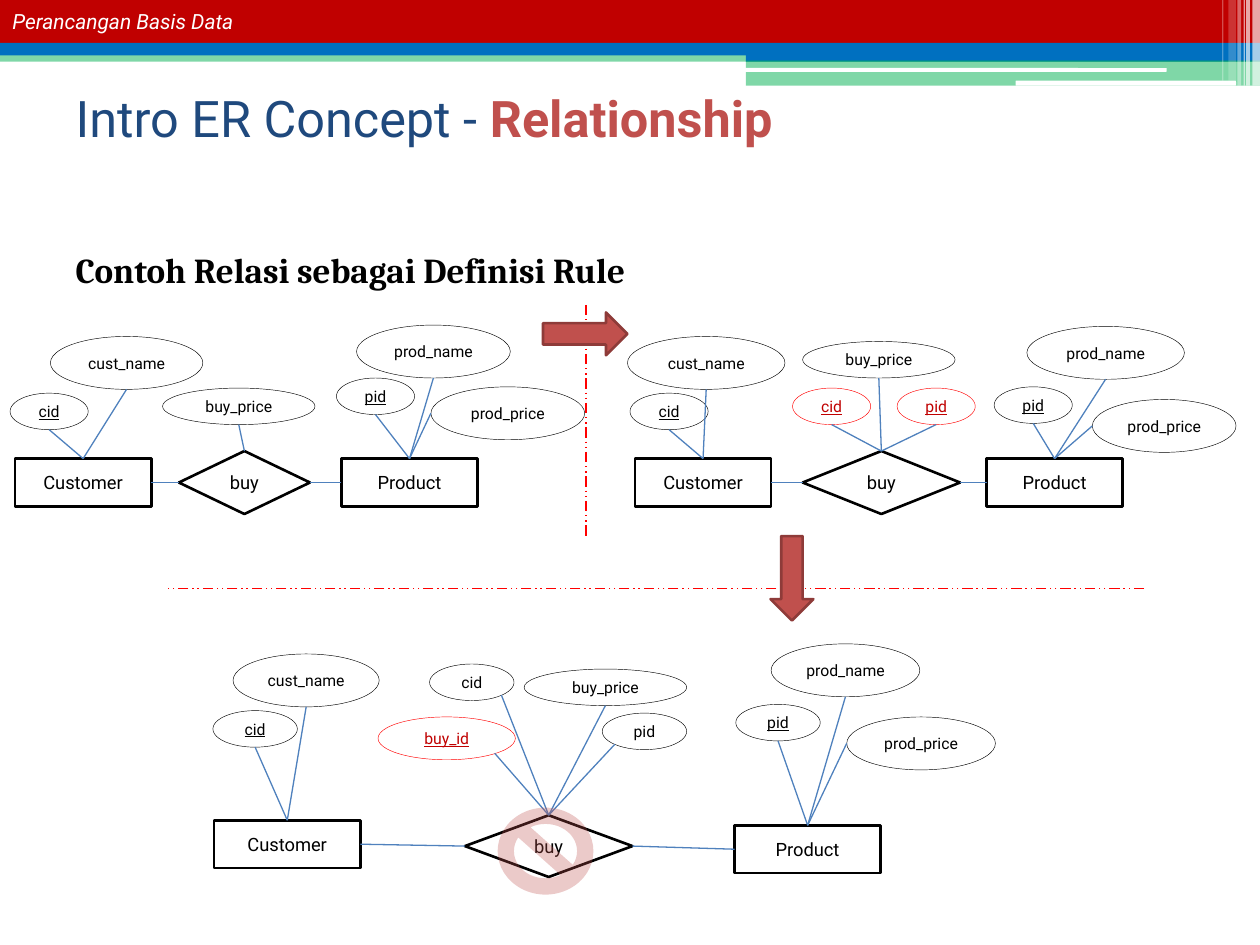
from dataclasses import dataclass
from typing import NamedTuple
from lxml.etree import SubElement
from pptx import Presentation
from pptx.dml.color import RGBColor
from pptx.enum.dml import MSO_LINE
from pptx.enum.shapes import MSO_CONNECTOR, MSO_SHAPE
from pptx.enum.text import MSO_ANCHOR, PP_ALIGN
from pptx.oxml.ns import qn
from pptx.util import Emu, Pt

PX = 9144
BLACK = RGBColor(0x00, 0x00, 0x00)
WHITE = RGBColor(0xFF, 0xFF, 0xFF)
RED = RGBColor(0xFF, 0x00, 0x00)
CRIMSON = RGBColor(0xC0, 0x00, 0x00)
BLUE = RGBColor(0x00, 0x70, 0xC0)
GREEN = RGBColor(0x00, 0xB0, 0x50)
NAVY = RGBColor(0x1F, 0x49, 0x7D)
BRICK = RGBColor(0xC0, 0x50, 0x4D)
RUST = RGBColor(0x8E, 0x3B, 0x39)
STEEL = RGBColor(0x4F, 0x81, 0xBD)
SANS = "Roboto"
RECT, ROUND = MSO_SHAPE.RECTANGLE, MSO_SHAPE.ROUNDED_RECTANGLE
PLAIN, RHOMB = MSO_SHAPE.FLOWCHART_PROCESS, MSO_SHAPE.FLOWCHART_DECISION
TOP, LEFT, RIGHT, BOTTOM = (0.5, 0), (0, 0.5), (1, 0.5), (0.5, 1)
LOW_LEFT, LOW_RIGHT = (0.15, 0.85), (0.85, 0.85)


class Box(NamedTuple):
    left: int
    top: int
    width: int
    height: int

    def spot(self, across: float, down: float) -> tuple[float, float]:
        return self.left + across * self.width, self.top + down * self.height


@dataclass
class Band:
    box: Box
    color: RGBColor
    alpha: int = 100
    kind: MSO_SHAPE = RECT


@dataclass
class Field:
    name: str
    box: Box
    key: bool = False
    red: bool = False
    foot: tuple = BOTTOM


@dataclass
class Node:
    name: str
    kind: MSO_SHAPE
    box: Box
    fields: list[Field]


BANDS = [
    Band(Box(0, 40, 1000, 9), GREEN, 50),
    Band(Box(0, 0, 1000, 34), CRIMSON),
    Band(Box(0, 34, 1000, 10), BLUE),
    Band(Box(592, 39, 408, 10), BLUE),
    Band(Box(592, 48, 408, 20), GREEN, 50),
    Band(Box(591, 54, 335, 3), WHITE, kind=ROUND),
    Band(Box(806, 64, 175, 4), WHITE, kind=ROUND),
    Band(Box(994, 0, 6, 68), WHITE, 65),
    Band(Box(989, 0, 3, 68), WHITE, 65),
    Band(Box(987, 0, 1, 68), WHITE, 60),
    Band(Box(982, 0, 3, 68), WHITE, 40),
    Band(Box(975, 0, 6, 64), WHITE, 20),
    Band(Box(970, 0, 1, 64), WHITE, 30),
]
CHARTS = [[
    Node("Customer", PLAIN, Box(12, 364, 108, 38), [
        Field("cid", Box(8, 312, 62, 29), True),
        Field("cust_name", Box(40, 267, 121, 42))]),
    Node("buy", RHOMB, Box(142, 358, 104, 50), [
        Field("buy_price", Box(129, 308, 121, 29))]),
    Node("Product", PLAIN, Box(271, 364, 108, 38), [
        Field("pid", Box(267, 300, 62, 29), True),
        Field("prod_name", Box(283, 258, 122, 42)),
        Field("prod_price", Box(342, 307, 122, 42), foot=LEFT)]),
], [
    Node("Customer", PLAIN, Box(504, 364, 108, 38), [
        Field("cid", Box(500, 312, 62, 29), True),
        Field("cust_name", Box(498, 267, 125, 42))]),
    Node("buy", RHOMB, Box(637, 358, 125, 50), [
        Field("buy_price", Box(637, 271, 121, 29)),
        Field("cid", Box(629, 308, 62, 29), True, True),
        Field("pid", Box(712, 308, 62, 29), True, True)]),
    Node("Product", PLAIN, Box(783, 364, 108, 38), [
        Field("pid", Box(789, 307, 62, 29), True),
        Field("prod_name", Box(815, 259, 125, 42)),
        Field("prod_price", Box(867, 317, 114, 42), foot=LEFT)]),
], [
    Node("Customer", PLAIN, Box(170, 651, 116, 38), [
        Field("cid", Box(169, 564, 67, 29), True),
        Field("cust_name", Box(185, 519, 116, 42))]),
    Node("buy", RHOMB, Box(369, 647, 133, 49), [
        Field("buy_price", Box(416, 531, 129, 29)),
        Field("cid", Box(341, 527, 67, 29), foot=LOW_RIGHT),
        Field("pid", Box(478, 566, 67, 29), foot=LOW_LEFT),
        Field("buy_id", Box(300, 569, 109, 34), True, True, LOW_RIGHT)]),
    Node("Product", PLAIN, Box(583, 655, 116, 38), [
        Field("pid", Box(584, 559, 67, 29), True),
        Field("prod_name", Box(612, 511, 118, 42)),
        Field("prod_price", Box(672, 569, 118, 42), foot=LEFT)]),
]]


def scale(*values: float) -> list[Emu]:
    return [Emu(round(v * PX)) for v in values]


def style(font, name: str, size: float, color: RGBColor) -> None:
    font.name, font.size, font.color.rgb = name, Pt(size), color


def draw(shapes, kind: MSO_SHAPE, box: Box, color: RGBColor, alpha: int = 100,
         edge: RGBColor | None = None, width: float = 1.5):
    shape = shapes.add_shape(kind, *scale(*box))
    shape.shadow.inherit = False
    shape.fill.solid()
    shape.fill.fore_color.rgb = color
    if alpha < 100:
        tint = shape._element.spPr.find(qn("a:solidFill"))[0]
        SubElement(tint, qn("a:alpha"), val=str(alpha * 1000))
    if edge is None:
        shape.line.fill.background()
    else:
        shape.line.color.rgb, shape.line.width = edge, Pt(width)
    return shape


def label(shape, text: str, size: float, color: RGBColor, key: bool = False) -> None:
    frame = shape.text_frame
    frame.margin_left = frame.margin_right = frame.margin_top = frame.margin_bottom = 0
    frame.word_wrap, frame.vertical_anchor = False, MSO_ANCHOR.MIDDLE
    para = frame.paragraphs[0]
    para.text, para.alignment = text, PP_ALIGN.CENTER
    style(para.font, SANS, size, color)
    para.font.underline = key


def link(shapes, start: tuple, end: tuple, color: RGBColor = STEEL, dash=None) -> None:
    line = shapes.add_connector(MSO_CONNECTOR.STRAIGHT, *scale(*start, *end))
    line.line.color.rgb, line.line.width = color, Pt(0.75)
    if dash is not None:
        line.line.dash_style = dash
    SubElement(line._element.spPr, qn("a:effectLst"))


def chart(shapes, nodes: list[Node]) -> None:
    for node in nodes:
        label(draw(shapes, node.kind, node.box, WHITE, edge=BLACK), node.name, 10.5, BLACK)
    for one, two in zip(nodes, nodes[1:]):
        link(shapes, one.box.spot(*RIGHT), two.box.spot(*LEFT))
    for node in nodes:
        for field in node.fields:
            edge, ink = (RED, CRIMSON) if field.red else (BLACK, BLACK)
            oval = draw(shapes, MSO_SHAPE.OVAL, field.box, WHITE, edge=edge, width=0.25)
            label(oval, field.name, 9, ink, field.key)
            link(shapes, node.box.spot(*TOP), field.box.spot(*field.foot))


def heads(title, body) -> None:
    title.left, title.top, title.width, title.height = scale(50, 63, 900, 60)
    title.text_frame.vertical_anchor = MSO_ANCHOR.MIDDLE
    para = title.text_frame.paragraphs[0]
    para.alignment = PP_ALIGN.LEFT
    for text, color in (("Intro ER Concept - ", NAVY), ("Relationship", BRICK)):
        run = para.add_run()
        run.text, run.font.color.rgb, run.font.bold = text, color, color == BRICK
    para.font.name, para.font.size = SANS, Pt(28.8)
    body.left, body.top, body.width, body.height = scale(50, 192, 900, 494)
    para = body.text_frame.paragraphs[0]
    para.text, para.space_before = "Contoh Relasi sebagai Definisi Rule", Pt(0)
    props = para._p.get_or_add_pPr()
    props.set("marL", "0")
    props.set("indent", "0")
    SubElement(props, qn("a:buNone"))
    style(para.font, "Cambria", 20, BLACK)
    para.font.bold = True


deck = Presentation()
deck.slide_width, deck.slide_height = scale(1000, 750)
slide = deck.slides.add_slide(deck.slide_layouts[1])
shapes = slide.shapes
heads(*slide.placeholders)
for band in BANDS:
    draw(shapes, band.kind, band.box, band.color, band.alpha)
note = shapes.add_textbox(*scale(0, -3, 888, 39))
note.text_frame.word_wrap, note.text_frame.vertical_anchor = True, MSO_ANCHOR.MIDDLE
para = note.text_frame.paragraphs[0]
para.text = "Perancangan Basis Data"
style(para.font, SANS, 12, WHITE)
para.font.italic = True
for nodes in CHARTS:
    chart(shapes.add_group_shape().shapes, nodes)
for start, end in (((465, 242), (465, 425)), ((908, 467), (131, 467))):
    link(shapes, start, end, RED, MSO_LINE.DASH_DOT_DOT)
for box, turn in ((Box(431, 248, 67, 34), 0), (Box(595, 442, 67, 34), 90)):
    draw(shapes, MSO_SHAPE.RIGHT_ARROW, box, BRICK, edge=RUST).rotation = turn
draw(shapes, MSO_SHAPE.NO_SYMBOL, Box(395, 641, 76, 69), BRICK, 30)
deck.save("out.pptx")
